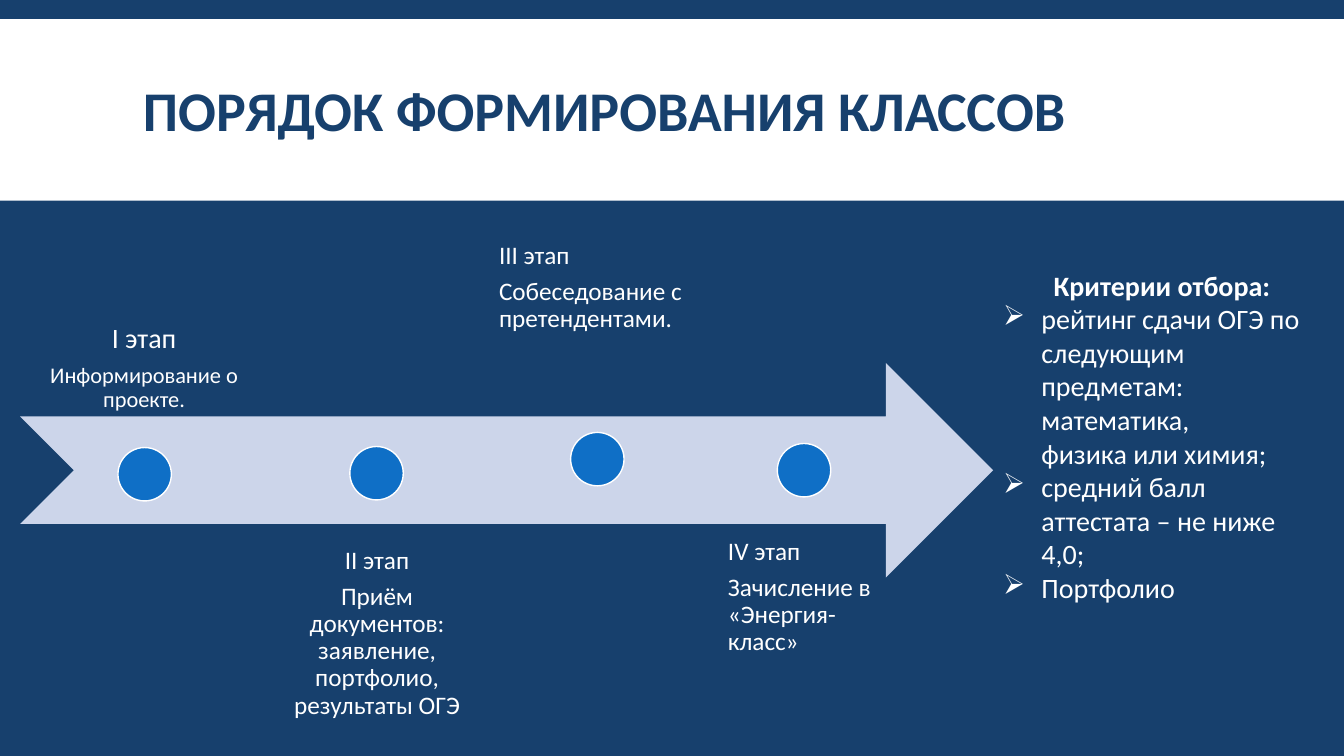
from lxml import etree
from pptx import Presentation
from pptx.dml.color import RGBColor
from pptx.enum.shapes import MSO_SHAPE
from pptx.enum.text import MSO_ANCHOR, PP_ALIGN
from pptx.oxml.ns import qn
from pptx.util import Inches, Pt

RECTANGLE = MSO_SHAPE.RECTANGLE
ARROW = MSO_SHAPE.NOTCHED_RIGHT_ARROW
OVAL = MSO_SHAPE.OVAL
TOP, MIDDLE, BOTTOM = MSO_ANCHOR.TOP, MSO_ANCHOR.MIDDLE, MSO_ANCHOR.BOTTOM
LEFT, CENTER = PP_ALIGN.LEFT, PP_ALIGN.CENTER

NAVY, BLUE, PALE, WHITE = "17406D", "0F6FC6", "CCD5EA", "FFFFFF"
MARKER_SIZE = 0.53
HANGING = 0.38


def color(value):
    return RGBColor.from_string(value)


class SlideBuilder:
    """Holds the style and the current slide and adds elements to it."""

    font = "Calibri"

    def __init__(self, slide, background):
        self.slide = slide
        fill = slide.background.fill
        fill.solid()
        fill.fore_color.rgb = color(background)

    def shape(self, kind, box, fill, line=None):
        shape = self.slide.shapes.add_shape(kind, *map(Inches, box))
        shape.shadow.inherit = False
        shape.fill.solid()
        shape.fill.fore_color.rgb = color(fill)
        if line:
            shape.line.color.rgb = color(line)
            shape.line.width = Pt(1)
        else:
            shape.line.fill.background()
        return shape

    def text_box(self, box, anchor=TOP, inset=None):
        text_frame = self.slide.shapes.add_textbox(*map(Inches, box)).text_frame
        text_frame.word_wrap = True
        text_frame.vertical_anchor = anchor
        if inset is not None:
            text_frame.margin_left = text_frame.margin_right = Inches(inset)
            text_frame.margin_top = text_frame.margin_bottom = Inches(inset)
        return text_frame

    def style(self, paragraph, size, ink=WHITE, bold=False, align=LEFT, spacing=1.0):
        paragraph.alignment = align
        paragraph.line_spacing = spacing
        for run in paragraph.runs:
            run.font.name = self.font
            run.font.size = Pt(size)
            run.font.bold = bold
            run.font.color.rgb = color(ink)

    def title(self, text, box):
        text_frame = self.text_box(box, MIDDLE)
        text_frame.text = text
        self.style(text_frame.paragraphs[0], 40, NAVY, True, spacing=0.85)

    def stage(self, lines, sizes, box, align, anchor, inset):
        text_frame = self.text_box(box, anchor, inset)
        text_frame.text = "\n".join(lines)
        for paragraph, size in zip(text_frame.paragraphs, sizes):
            self.style(paragraph, size, align=align, spacing=0.9)
            paragraph.space_after = Pt(round(0.35 * size, 1))

    def marker(self, left, top):
        self.shape(OVAL, (left, top, MARKER_SIZE, MARKER_SIZE), BLUE, WHITE)

    def criteria(self, heading, items, box):
        text_frame = self.text_box(box)
        text_frame.text = "\n".join([heading] + [text for text, _ in items])
        first, *rest = text_frame.paragraphs
        self.style(first, 20, bold=True, align=CENTER)
        for paragraph, (_, bulleted) in zip(rest, items):
            self.indent(paragraph, bulleted)
            self.style(paragraph, 20)

    def indent(self, paragraph, bulleted):
        properties = paragraph._p.get_or_add_pPr()
        properties.set("marL", str(Inches(HANGING)))
        properties.set("indent", str(-Inches(HANGING) if bulleted else 0))
        if bulleted:
            etree.SubElement(properties, qn("a:buChar")).set("char", "➢")


def main():
    presentation = Presentation()
    presentation.slide_width = Inches(13.33)
    presentation.slide_height = Inches(7.5)
    slide = presentation.slides.add_slide(presentation.slide_layouts[6])
    builder = SlideBuilder(slide, NAVY)

    builder.shape(RECTANGLE, (0, 0.19, 13.33, 1.8), WHITE)
    builder.title("ПОРЯДОК ФОРМИРОВАНИЯ КЛАССОВ", (1.32, 0.31, 10.7, 1.65))
    builder.shape(ARROW, (0.2, 3.6, 9.65, 2.13), PALE)

    stages = [
        (("I этап", "Информирование о проекте."), (20, 16),
         (0.2, 1.96, 2.46, 2.29), CENTER, BOTTOM, 0.16, (1.17, 4.44)),
        (("II этап", "Приём документов: заявление, портфолио, результаты ОГЭ"), (18, 18),
         (2.7, 5.29, 2.08, 2.01), CENTER, TOP, 0.14, (3.47, 4.43)),
        (("III этап", "Собеседование с претендентами."), (18, 18),
         (4.81, 2.27, 2.24, 1.55), LEFT, TOP, 0.14, (5.66, 4.29)),
        (("IV этап", "Зачисление в «Энергия-класс»"), (18, 18),
         (7.08, 5.2, 1.79, 2.13), LEFT, TOP, 0.14, (7.71, 4.4)),
    ]
    for *stage, marker in stages:
        builder.stage(*stage)
        builder.marker(*marker)

    builder.criteria(
        "Критерии отбора:",
        [
            ("рейтинг сдачи ОГЭ по следующим предметам: математика,", True),
            ("физика или химия;", False),
            ("средний балл аттестата – не ниже 4,0;", True),
            ("Портфолио", True),
        ],
        (9.85, 2.61, 3.35, 3.47),
    )
    presentation.save("out.pptx")


if __name__ == "__main__":
    main()
